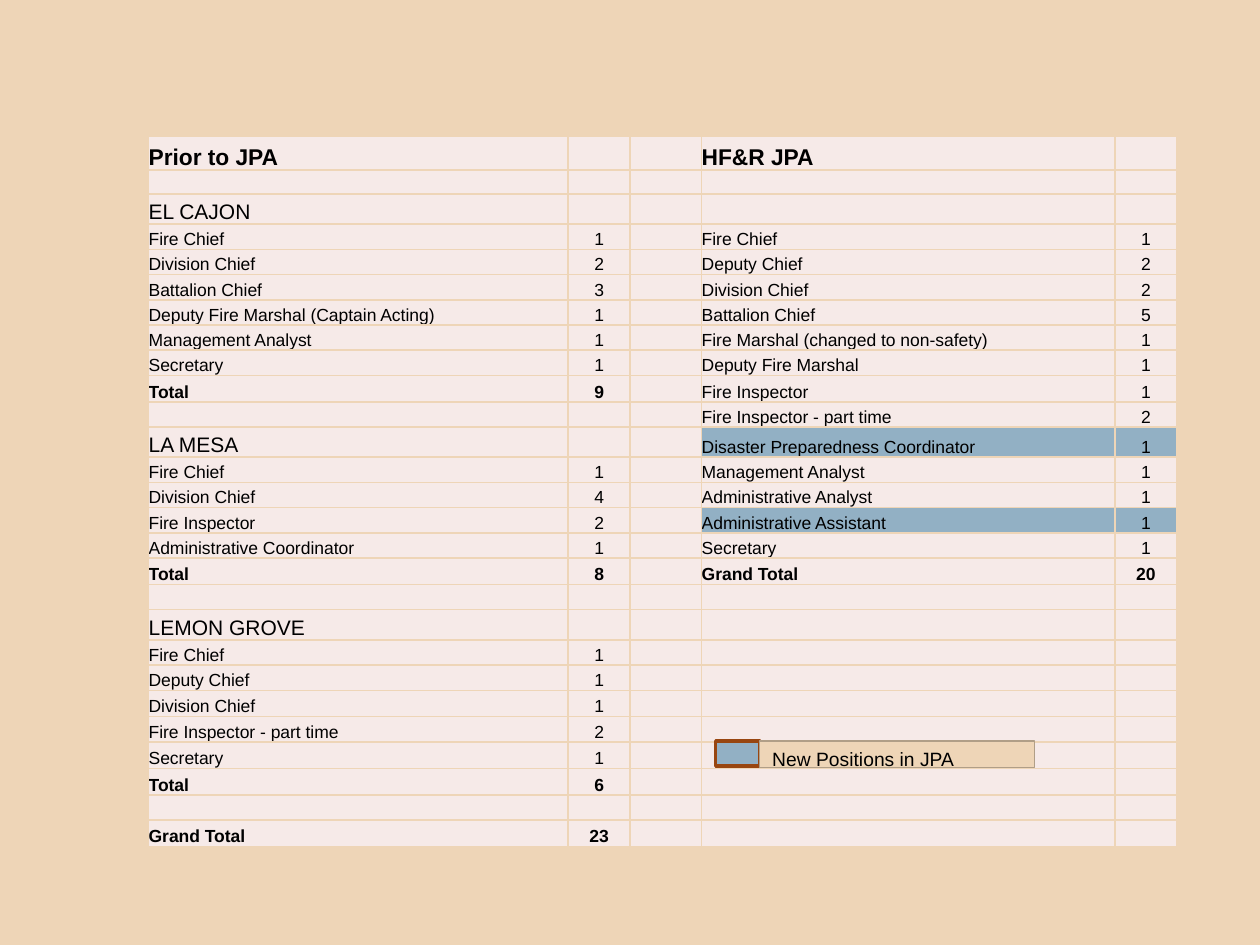
from lxml import etree
from pptx import Presentation
from pptx.dml.color import RGBColor
from pptx.enum import shapes, text
from pptx.oxml import ns
from pptx.util import Inches, Pt

SAND = RGBColor(0xEE, 0xD5, 0xB7)
PALE = RGBColor(0xF6, 0xEA, 0xE8)
BLUE = RGBColor(0x92, 0xB0, 0xC4)
RUST = RGBColor(0x98, 0x46, 0x10)
TAUPE = RGBColor(0xB0, 0x9E, 0x87)
BLACK = RGBColor(0, 0, 0)
FONT = "Arial"

TITLES = ("Prior to JPA", "HF&R JPA")
CITIES = ("EL CAJON", "LA MESA", "LEMON GROVE")
TOTALS = ("Total", "Grand Total")
NEW_POSITIONS = ("Disaster Preparedness Coordinator", "Administrative Assistant")

# Position and count before the JPA, then position and count in the JPA
STAFFING = [
    ("Prior to JPA", "", "HF&R JPA", ""),
    ("", "", "", ""),
    ("EL CAJON", "", "", ""),
    ("Fire Chief", "1", "Fire Chief", "1"),
    ("Division Chief", "2", "Deputy Chief", "2"),
    ("Battalion Chief", "3", "Division Chief", "2"),
    ("Deputy Fire Marshal (Captain Acting)", "1", "Battalion Chief", "5"),
    ("Management Analyst", "1", "Fire Marshal (changed to non-safety)", "1"),
    ("Secretary", "1", "Deputy Fire Marshal", "1"),
    ("Total", "9", "Fire Inspector", "1"),
    ("", "", "Fire Inspector - part time", "2"),
    ("LA MESA", "", "Disaster Preparedness Coordinator", "1"),
    ("Fire Chief", "1", "Management Analyst", "1"),
    ("Division Chief", "4", "Administrative Analyst", "1"),
    ("Fire Inspector", "2", "Administrative Assistant", "1"),
    ("Administrative Coordinator", "1", "Secretary", "1"),
    ("Total", "8", "Grand Total", "20"),
    ("", "", "", ""),
    ("LEMON GROVE", "", "", ""),
    ("Fire Chief", "1", "", ""),
    ("Deputy Chief", "1", "", ""),
    ("Division Chief", "1", "", ""),
    ("Fire Inspector - part time", "2", "", ""),
    ("Secretary", "1", "", ""),
    ("Total", "6", "", ""),
    ("", "", "", ""),
    ("Grand Total", "23", "", ""),
]
COLUMN_WIDTHS = (3.33, 0.49, 0.57, 3.28, 0.49)
ROW_HEIGHTS = (
    [0.27, 0.19, 0.24] + [0.2] * 6 + [0.21, 0.2, 0.24] + [0.2] * 4
    + [0.21, 0.2, 0.24, 0.2, 0.2, 0.21, 0.2, 0.21, 0.21, 0.2, 0.21]
)


def format_cell(cell, fill, size):
    """Set fill, borders, margins and the size that keeps an empty row low."""
    cell.margin_left = cell.margin_right = cell.margin_top = cell.margin_bottom = 0
    cell.vertical_anchor = text.MSO_ANCHOR.BOTTOM
    properties = cell._tc.get_or_add_tcPr()
    for side in ("a:lnL", "a:lnR", "a:lnT", "a:lnB"):
        border = etree.SubElement(properties, ns.qn(side), w=str(Pt(1)))
        solid = etree.SubElement(border, ns.qn("a:solidFill"))
        etree.SubElement(solid, ns.qn("a:srgbClr"), val=str(SAND))
    cell.fill.solid()
    cell.fill.fore_color.rgb = fill
    if not cell.text:
        paragraph = cell.text_frame.paragraphs[0]
        etree.SubElement(paragraph._p, ns.qn("a:endParaRPr"), sz=str(size * 100))


def format_run(run, size, bold=False):
    run.font.name = FONT
    run.font.size = Pt(size)
    run.font.bold = bold
    run.font.color.rgb = BLACK


presentation = Presentation()
presentation.slide_width = Inches(10)
presentation.slide_height = Inches(7.5)
slide = presentation.slides.add_slide(presentation.slide_layouts[6])
slide.background.fill.solid()
slide.background.fill.fore_color.rgb = SAND

# Staffing table
table = slide.shapes.add_table(
    len(STAFFING), len(COLUMN_WIDTHS),
    Inches(1.18), Inches(1.08), Inches(sum(COLUMN_WIDTHS)), Inches(sum(ROW_HEIGHTS)),
).table
table.first_row = False
table.horz_banding = False
for column, width in zip(table.columns, COLUMN_WIDTHS):
    column.width = Inches(width)
for row, height in zip(table.rows, ROW_HEIGHTS):
    row.height = Inches(height)

for row, (before, before_count, after, after_count) in zip(table.rows, STAFFING):
    labels = (before, before, "", after, after)
    values = (before, before_count, "", after, after_count)
    for index, (cell, label, value) in enumerate(zip(row.cells, labels, values)):
        size = 13 if label in TITLES else 12 if label in CITIES else 10
        cell.text = value
        format_cell(cell, BLUE if label in NEW_POSITIONS else PALE, 10)
        paragraph = cell.text_frame.paragraphs[0]
        if index in (1, 4):
            paragraph.alignment = text.PP_ALIGN.CENTER
        for run in paragraph.runs:
            format_run(run, size, bold=label in TITLES + TOTALS)

# Legend
for left, width, height, fill, line, weight, caption in (
    (5.68, 0.35, 0.2, BLUE, RUST, 2, ""),
    (6.03, 2.18, 0.21, SAND, TAUPE, 0.75, "New Positions in JPA"),
):
    shape = slide.shapes.add_shape(
        shapes.MSO_SHAPE.RECTANGLE, Inches(left), Inches(5.88), Inches(width), Inches(height)
    )
    shape.shadow.inherit = False
    shape.fill.solid()
    shape.fill.fore_color.rgb = fill
    shape.line.color.rgb = line
    shape.line.width = Pt(weight)
    if caption:
        shape.text_frame.text = caption
        shape.text_frame.vertical_anchor = text.MSO_ANCHOR.TOP
        paragraph = shape.text_frame.paragraphs[0]
        paragraph.alignment = text.PP_ALIGN.LEFT
        format_run(paragraph.runs[0], 11)

presentation.save("out.pptx")
